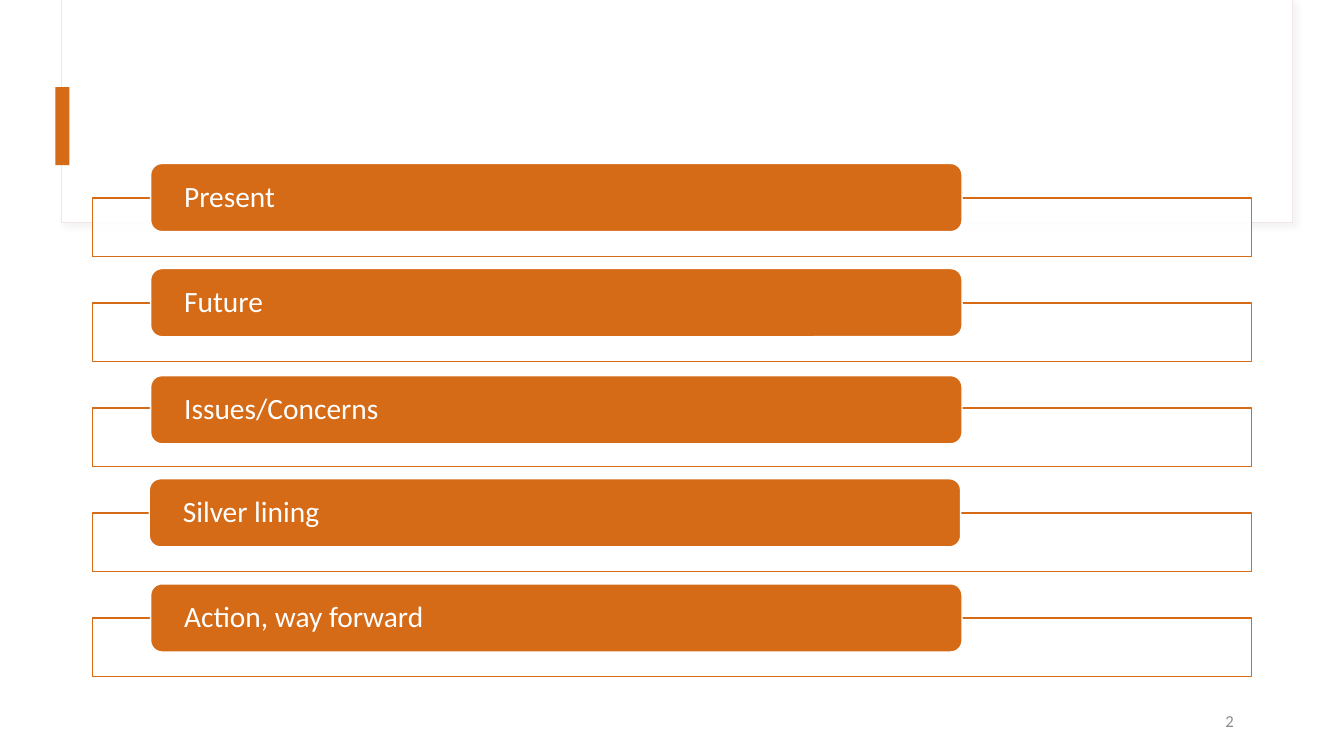
from lxml import etree
from pptx import Presentation, util as u
from pptx.dml.color import RGBColor
from pptx.enum import shapes, text
from pptx.oxml import ns

INK = {"main": "D56A17", "white": "FFFFFF", "edge": "F0E5E8",
       "shade": "D9D9D9", "gray": "8C8C8C"}
RECT = shapes.MSO_SHAPE.RECTANGLE
ROUND = shapes.MSO_SHAPE.ROUNDED_RECTANGLE

deck = Presentation()
deck.slide_width, deck.slide_height = u.Pt(960), u.Pt(540)
slide = deck.slides.add_slide(deck.slide_layouts[6])


def box(kind, area, fill, line=None, width=1):
    shape = slide.shapes.add_shape(kind, *map(u.Pt, area))
    shape.shadow.inherit = False
    shape.fill.solid()
    shape.fill.fore_color.rgb = RGBColor.from_string(INK[fill])
    if line:
        shape.line.color.rgb = RGBColor.from_string(INK[line])
        shape.line.width = u.Pt(width)
    else:
        shape.line.fill.background()
    return shape


def write(shape, words, size, color, align, inset):
    frame = shape.text_frame
    form = {"word_wrap": True, "vertical_anchor": text.MSO_ANCHOR.MIDDLE,
            "margin_left": u.Pt(inset), "margin_right": u.Pt(inset),
            "margin_top": 0, "margin_bottom": 0}
    for key, value in form.items():
        setattr(frame, key, value)
    para = frame.paragraphs[0]
    para.text = words
    para.alignment = align
    for key, value in {"name": "Calibri", "size": u.Pt(size)}.items():
        setattr(para.font, key, value)
    para.font.color.rgb = RGBColor.from_string(INK[color])
    return para


panel = box(RECT, (43.9, 0, 879.1, 159.1), "white", "edge", 0.75)
effect = panel.element.spPr.find(ns.qn("a:effectLst"))
shade = etree.SubElement(effect, ns.qn("a:outerShdw"), blurRad=str(u.Pt(4)),
                         dist=str(u.Pt(3)), dir="2700000")
tint = etree.SubElement(shade, ns.qn("a:srgbClr"), val=INK["shade"])
etree.SubElement(tint, ns.qn("a:alpha"), val="30000")
box(RECT, (44.6, 0, 878.4, 158.4), "white")
box(RECT, (39.6, 62.2, 10.1, 55.7), "main")

topics = [("Present", 0, 0), ("Future", 0, 0), ("Issues/Concerns", 0, 1.4),
          ("Silver lining", -1, 0), ("Action, way forward", 0, 0)]
for row, (topic, dx, dy) in enumerate(topics):
    drop = row * 75.06
    frame = box(RECT, (66.2, 141.3 + drop, 828, 41.8), "white", "main")
    color = frame.element.spPr.find(".//" + ns.qn("a:srgbClr"))
    etree.SubElement(color, ns.qn("a:alpha"), val="90000")
    label = box(ROUND, (107.6 + dx, 116.8 + drop + dy, 579.6, 48.7), "main", "white")
    para = write(label, topic, 21, "white", text.PP_ALIGN.LEFT, 21.6)
    para.line_spacing = 0.9

number = slide.shapes.add_textbox(*map(u.Pt, (672.5, 500.4, 216, 28.8)))
write(number, "2", 12, "gray", text.PP_ALIGN.RIGHT, 7.2)

deck.save("out.pptx")
